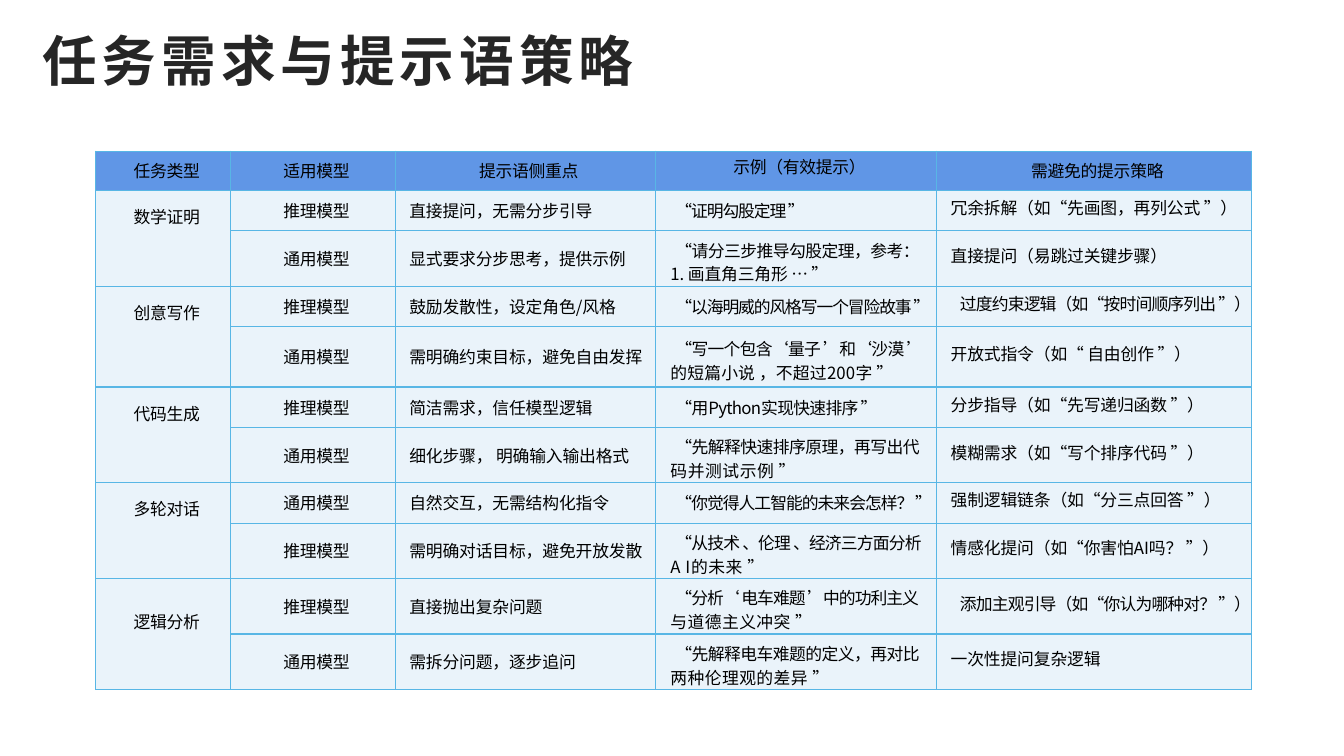
from lxml import etree
from pptx import Presentation
from pptx.dml.color import RGBColor
from pptx.enum.text import MSO_ANCHOR, PP_ALIGN
from pptx.oxml.ns import qn
from pptx.util import Inches, Pt

CENTER, LEFT, RIGHT = PP_ALIGN.CENTER, PP_ALIGN.LEFT, PP_ALIGN.RIGHT
TOP, MIDDLE = MSO_ANCHOR.TOP, MSO_ANCHOR.MIDDLE
FONT = "Noto Sans CJK SC"
COLORS = {"title": "262626", "text": "000000", "header": "6096E6",
          "body": "EAF3FA", "border": "58B6E5"}

COL_WIDTHS = [1.34, 1.63, 2.58, 2.79, 3.12]
ROW_HEIGHTS = [0.39, 0.4, 0.55, 0.4, 0.6, 0.4, 0.55, 0.4, 0.55, 0.55, 0.55]
HEADERS = ["任务类型", "适用模型", "提示语侧重点", "示例（有效提示）", "需避免的提示策略"]
TASKS = ["数学证明", "创意写作", "代码生成", "多轮对话", "逻辑分析"]

# model, focus, example lines with their letter spacing, strategy to avoid
ROWS = [
    ("推理模型", "直接提问，无需分步引导",
     [("“证明勾股定理 ”", -0.8)], "冗余拆解（如“先画图，再列公式 ”）"),
    ("通用模型", "显式要求分步思考，提供示例",
     [("“请分三步推导勾股定理，参考：", -0.4), ("1. 画直角三角形 … ”", -0.1)],
     "直接提问（易跳过关键步骤）"),
    ("推理模型", "鼓励发散性，设定角色/风格",
     [("“以海明威的风格写一个冒险故事 ”", -0.8)], "过度约束逻辑（如“按时间顺序列出 ”）"),
    ("通用模型", "需明确约束目标，避免自由发挥",
     [("“写一个包含‘量子 ’和‘沙漠 ’", -0.5), ("的短篇小说 ，不超过200字 ”", 0.1)],
     "开放式指令（如“ 自由创作 ”）"),
    ("推理模型", "简洁需求，信任模型逻辑",
     [("“用Python实现快速排序 ”", -0.5)], "分步指导（如“先写递归函数 ”）"),
    ("通用模型", "细化步骤， 明确输入输出格式",
     [("“先解释快速排序原理，再写出代", -0.4), ("码并测试示例 ”", 0.4)],
     "模糊需求（如“写个排序代码 ”）"),
    ("通用模型", "自然交互，无需结构化指令",
     [("“你觉得人工智能的未来会怎样？ ”", -0.7)], "强制逻辑链条（如“分三点回答 ”）"),
    ("推理模型", "需明确对话目标，避免开放发散",
     [("“从技术 、伦理 、经济三方面分析", -0.6), ("A I的未来 ”", 0.4)],
     "情感化提问（如“你害怕AI吗？ ”）"),
    ("推理模型", "直接抛出复杂问题",
     [("“分析‘ 电车难题 ’中的功利主义", -0.7), ("与道德主义冲突 ”", 0.3)],
     "添加主观引导（如“你认为哪种对？ ”）"),
    ("通用模型", "需拆分问题，逐步追问",
     [("“先解释电车难题的定义，再对比", -0.4), ("两种伦理观的差异 ”", 0.3)],
     "一次性提问复杂逻辑"),
]


def style_run(r, size, color, spacing):
    r.font.size = Pt(size)
    r.font.name = FONT
    r.font.color.rgb = RGBColor.from_string(COLORS[color])
    rPr = r._r.get_or_add_rPr()
    rPr.set("spc", str(round(spacing * 100)))
    etree.SubElement(rPr, qn("a:ea"), typeface=FONT)


def fill_cell(cell, lines, fill="body", align=LEFT, left=0.14, top=0, bottom=0,
              anchor=MIDDLE, first_indent=0):
    """Write (text, spacing) lines into a cell, with borders and fill."""
    tcPr = cell._tc.get_or_add_tcPr()
    for side in ("lnL", "lnR", "lnT", "lnB"):
        ln = etree.SubElement(tcPr, qn(f"a:{side}"), w=str(Pt(1)))
        solid = etree.SubElement(ln, qn("a:solidFill"))
        etree.SubElement(solid, qn("a:srgbClr"), val=COLORS["border"])
    cell.fill.solid()
    cell.fill.fore_color.rgb = RGBColor.from_string(COLORS[fill])
    cell.margin_left, cell.margin_right = Inches(left), 0
    cell.margin_top, cell.margin_bottom = Inches(top), Inches(bottom)
    cell.vertical_anchor = anchor
    tf = cell.text_frame
    for i, (text, spacing) in enumerate(lines):
        p = tf.add_paragraph() if i else tf.paragraphs[0]
        p.text = text
        p.alignment = align
        p.line_spacing = Pt(17)
        if i == 0 and first_indent:
            p._p.get_or_add_pPr().set("indent", str(Inches(first_indent)))
        style_run(p.runs[0], 12, "text", spacing)


prs = Presentation()
prs.slide_width, prs.slide_height = Inches(13.33), Inches(7.5)
s = prs.slides.add_slide(prs.slide_layouts[5])

title = s.shapes.title
title.left, title.top = Inches(0.42), Inches(0.29)
title.width, title.height = Inches(6.2), Inches(0.6)
tf = title.text_frame
tf.margin_left = tf.margin_right = tf.margin_top = tf.margin_bottom = 0
tf.vertical_anchor = MIDDLE
tf.text = "任务需求与提示语策略"
p = tf.paragraphs[0]
p.alignment = LEFT
p.runs[0].font.bold = True
style_run(p.runs[0], 39, "title", 3.6)

table = s.shapes.add_table(len(ROW_HEIGHTS), len(COL_WIDTHS), Inches(0.95), Inches(1.5),
                           Inches(sum(COL_WIDTHS)), Inches(sum(ROW_HEIGHTS))).table
for col, width in zip(table.columns, COL_WIDTHS):
    col.width = Inches(width)
for row, height in zip(table.rows, ROW_HEIGHTS):
    row.height = Inches(height)

for c, header in enumerate(HEADERS):
    fill_cell(table.cell(0, c), [(header, -0.2)], "header", CENTER, left=0.07,
              bottom=0.08 if c == 3 else 0)

for i, task in enumerate(TASKS):
    cell, below = table.cell(1 + 2 * i, 0), table.cell(2 + 2 * i, 0)
    fill_cell(below, [])
    cell.merge(below)
    fill_cell(cell, [(task, -0.2)], align=CENTER, left=0.07, anchor=TOP,
              top=0.31 if task == "逻辑分析" else 0.14)

for r, (model, focus, example, avoid) in enumerate(ROWS, start=1):
    fill_cell(table.cell(r, 1), [(model, -0.2)], align=CENTER, left=0.07)
    fill_cell(table.cell(r, 2), [(focus, -0.1)])
    fill_cell(table.cell(r, 3), example, left=0.15, first_indent=0.05,
              top=0.07 if len(example) > 1 else 0)
    is_long = len(avoid) > 18
    fill_cell(table.cell(r, 4), [(avoid, -0.6 if is_long else -0.1)],
              align=RIGHT if is_long else LEFT, left=0 if is_long else 0.14, bottom=0.06)

prs.save("out.pptx")
